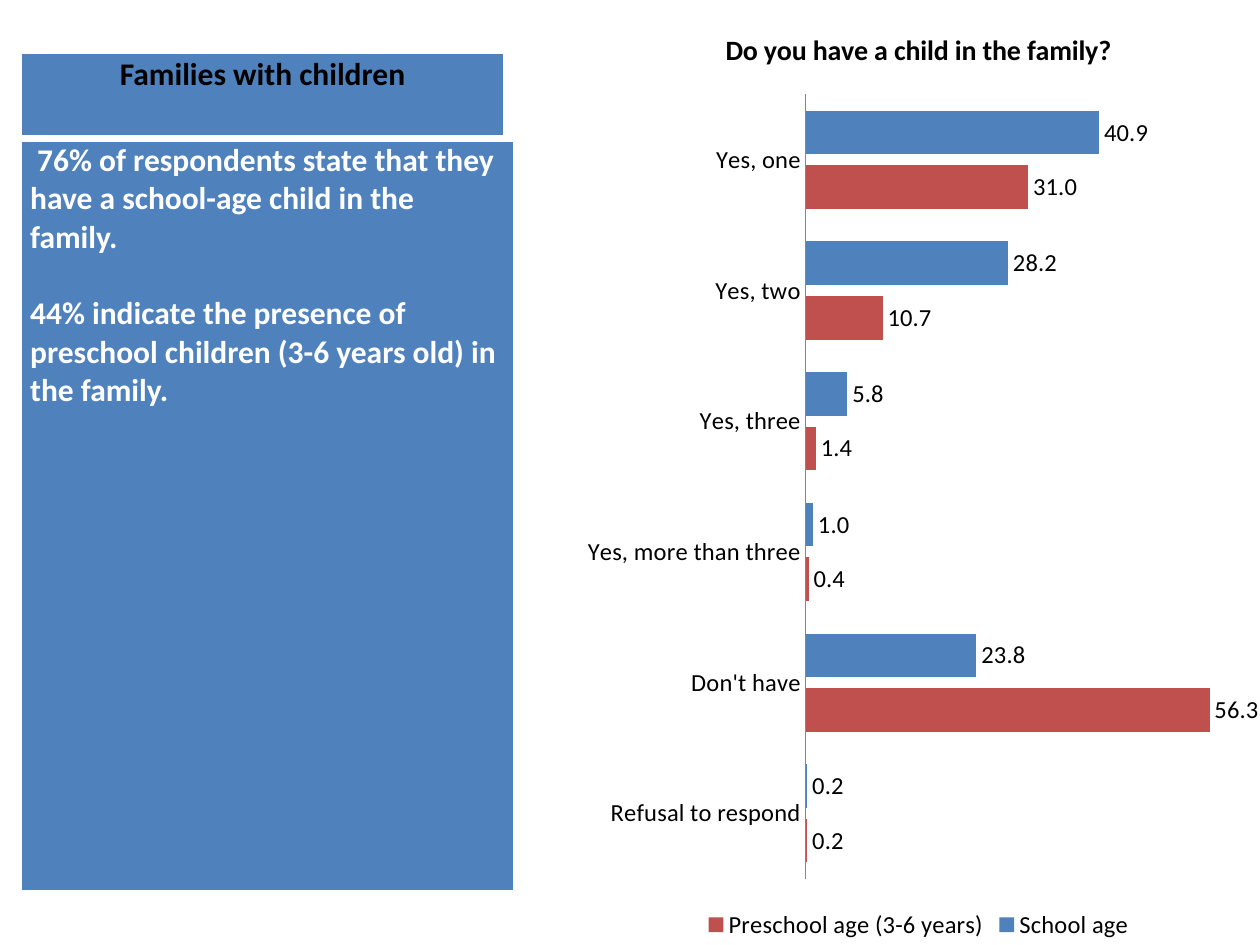
from lxml import etree
from pptx import Presentation
from pptx.chart.data import CategoryChartData
from pptx.dml.color import RGBColor
from pptx.enum.chart import XL_CHART_TYPE, XL_LABEL_POSITION, XL_LEGEND_POSITION, XL_TICK_LABEL_POSITION, XL_TICK_MARK
from pptx.enum.text import PP_ALIGN
from pptx.oxml import parse_xml
from pptx.oxml.ns import nsdecls, qn
from pptx.util import Pt

BLUE, RED, BLACK, WHITE = "4F81BD", "C0504D", "000000", "FFFFFF"
BORDERS = {"lnL": 1, "lnR": 1, "lnT": 1, "lnB": 3}


def rgb(hex_color):
    return RGBColor.from_string(hex_color)


def add_panel(left, top, width, height, color, paragraphs, formats):
    """Add a one-cell blue table; formats apply to each paragraph."""
    tbl = s.shapes.add_table(1, 1, Pt(left), Pt(top), Pt(width), Pt(height)).table
    tbl.first_row = tbl.horz_banding = False
    cell = tbl.cell(0, 0)
    cell.margin_left = cell.margin_right = Pt(5)
    cell.margin_top = cell.margin_bottom = 0
    tcPr = cell._tc.get_or_add_tcPr()
    for side, points in BORDERS.items():
        ln = etree.SubElement(tcPr, qn(f"a:{side}"), w=str(Pt(points)))
        fill = etree.SubElement(ln, qn("a:solidFill"))
        etree.SubElement(fill, qn("a:srgbClr"), val=WHITE)
    cell.fill.solid()
    cell.fill.fore_color.rgb = rgb(BLUE)
    tf = cell.text_frame
    for i, text in enumerate(paragraphs):
        p = tf.add_paragraph() if i else tf.paragraphs[0]
        for name, value in formats.items():
            setattr(p, name, value)
        if i:
            p.space_before = Pt(22)
        r = p.add_run()
        r.text = text
        for name, value in {"name": "Calibri", "size": Pt(18), "bold": True}.items():
            setattr(r.font, name, value)
        r.font.color.rgb = rgb(color)


prs = Presentation()
prs.slide_width, prs.slide_height = Pt(720), Pt(540)
s = prs.slides.add_slide(prs.slide_layouts[6])

# Chart
data = CategoryChartData(number_format="###0.0")
data.categories = ["Yes, one", "Yes, two", "Yes, three", "Yes, more than three",
                   "Don't have", "Refusal to respond"]
data.add_series("School age", [40.9, 28.2, 5.8, 1, 23.8, 0.2])
data.add_series("Preschool age (3-6 years)", [31, 10.7, 1.4, 0.4, 56.3, 0.2])
chart = s.shapes.add_chart(XL_CHART_TYPE.BAR_CLUSTERED, Pt(329.76), 0, Pt(390.24), Pt(540), data).chart
chart.font.name, chart.font.size = "Calibri", Pt(14)
chart.font.color.rgb = rgb(BLACK)

chart.has_title = True
chart.chart_title.include_in_layout = False
tf = chart.chart_title.text_frame
tf.text = "Do you have a child in the family?"
font = tf.paragraphs[0].runs[0].font
for name, value in {"name": "Calibri", "size": Pt(16), "bold": True}.items():
    setattr(font, name, value)
font.color.rgb = rgb(BLACK)

chart.has_legend = True
chart.legend.position = XL_LEGEND_POSITION.BOTTOM
chart.legend.include_in_layout = False

cat = chart.category_axis
cat.reverse_order = True
cat.format.line.color.rgb = rgb("868686")
cat.format.line.width = Pt(0.75)
val = chart.value_axis
val.minimum_scale, val.maximum_scale = 0, 60
val.tick_label_position = XL_TICK_LABEL_POSITION.NONE
val.format.line.fill.background()
for axis in (cat, val):
    axis.has_major_gridlines = False
    axis.major_tick_mark = axis.minor_tick_mark = XL_TICK_MARK.NONE

plot = chart.plots[0]
plot.gap_width, plot.overlap, plot.vary_by_categories = 75, -25, False
for series, color in zip(plot.series, (BLUE, RED)):
    series.invert_if_negative = False
    series.format.fill.solid()
    series.format.fill.fore_color.rgb = rgb(color)
    labels = series.data_labels
    for name, value in {"show_value": True, "number_format": "###0.0",
                        "number_format_is_linked": False,
                        "position": XL_LABEL_POSITION.OUTSIDE_END}.items():
        setattr(labels, name, value)

# Fixed inner plot area, as fractions of the chart
plot_area = chart._chartSpace.chart.plotArea
for old in plot_area.findall(qn("c:layout")):
    plot_area.remove(old)
layout = parse_xml(f'<c:layout {nsdecls("c")}><c:manualLayout/></c:layout>')
for tag, value in {"layoutTarget": "inner", "xMode": "edge", "yMode": "edge",
                   "x": 0.335, "y": 0.1, "w": 0.63, "h": 0.83}.items():
    etree.SubElement(layout[0], qn(f"c:{tag}"), val=str(value))
plot_area.insert(0, layout)

# Text panels
add_panel(12.24, 30.24, 275.76, 48.24, BLACK, ["Families with children"],
          {"alignment": PP_ALIGN.CENTER, "line_spacing": 1.07})
add_panel(12.24, 80.64, 281.52, 429.12, WHITE,
          [" 76% of respondents state that they have a school-age child in the family.",
           "44% indicate the presence of preschool children (3-6 years old) in the family."],
          {"alignment": PP_ALIGN.LEFT})

prs.save("out.pptx")
